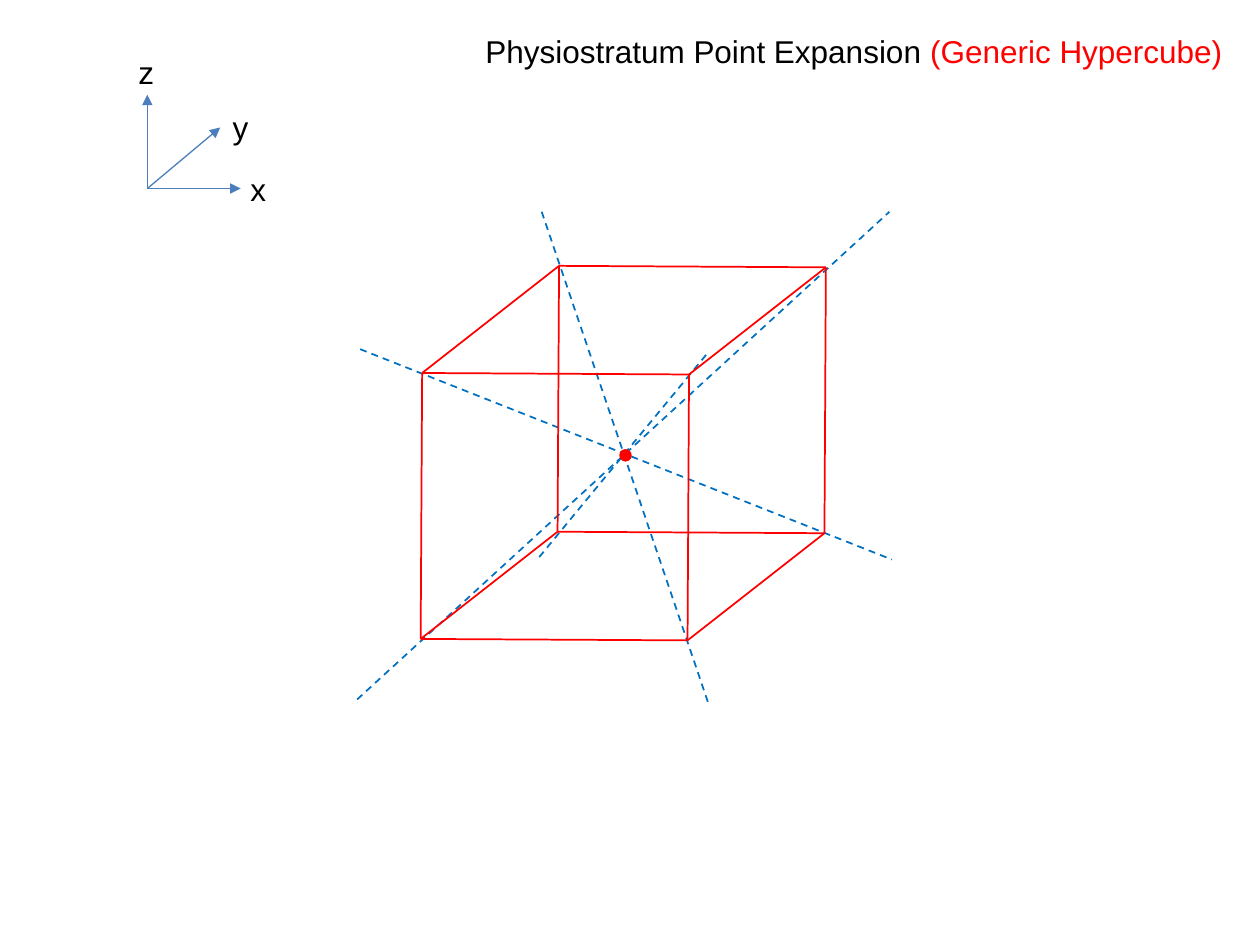
from itertools import combinations, product

from lxml.etree import SubElement
from pptx import Presentation
from pptx.dml.color import RGBColor
from pptx.enum.dml import MSO_LINE
from pptx.enum.shapes import MSO_CONNECTOR, MSO_SHAPE
from pptx.enum.text import MSO_ANCHOR, MSO_AUTO_SIZE, PP_ALIGN
from pptx.oxml.ns import qn
from pptx.util import Cm, Pt

COLOURS = {
    "text": "000000",
    "cube": "FF0000",
    "diagonal": "0070C0",
    "axis": "4B7EBC",
}


def colour(role):
    """Return the colour that belongs to a role."""
    return RGBColor.from_string(COLOURS[role])


def add_line(slide, origin, start, end, role, width=1, dashed=False, arrow=False):
    """Draw a straight line between two points measured in cm from origin."""
    left, top = origin
    line = slide.shapes.add_connector(
        MSO_CONNECTOR.STRAIGHT,
        Cm(left + start[0]), Cm(top + start[1]),
        Cm(left + end[0]), Cm(top + end[1]),
    )
    line.line.color.rgb = colour(role)
    line.line.width = Pt(width)
    if dashed:
        line.line.dash_style = MSO_LINE.DASH
    properties = line._element.spPr
    if arrow:
        SubElement(properties.find(qn("a:ln")), qn("a:tailEnd"), type="triangle")
    SubElement(properties, qn("a:effectLst"))


def format_text(paragraph):
    """Give a paragraph the font of the slide."""
    paragraph.font.name = "Arial"
    paragraph.font.size = Pt(18)
    paragraph.alignment = PP_ALIGN.LEFT


def add_heading(slide, left, top, width, height):
    """Fill and place the title with its coloured second part."""
    title = slide.shapes.title
    title.left, title.top, title.width, title.height = map(Cm, (left, top, width, height))
    frame = title.text_frame
    frame.word_wrap = True
    frame.auto_size = MSO_AUTO_SIZE.NONE
    frame.vertical_anchor = MSO_ANCHOR.TOP
    heading = frame.paragraphs[0]
    format_text(heading)
    parts = (("Physiostratum Point Expansion ", "text"), ("(Generic Hypercube)", "cube"))
    for words, role in parts:
        run = heading.add_run()
        run.text = words
        run.font.color.rgb = colour(role)


def add_axes(slide, left, top):
    """Draw the x, y and z arrows with their letters."""
    axes = (
        ("x", (2.31, 2.86), (2.26, 2.36)),
        ("y", (1.9, 1.63), (1.9, 1.12)),
        ("z", (0.43, 0.97), (0, 0)),
    )
    for letter, tip, corner in axes:
        add_line(slide, (left, top), (0.43, 2.86), tip, "axis", 0.75, arrow=True)
        label = slide.shapes.add_textbox(
            Cm(left + corner[0]), Cm(top + corner[1]), Cm(0.64), Cm(1.02)
        )
        label.text_frame.word_wrap = True
        paragraph = label.text_frame.paragraphs[0]
        paragraph.text = letter
        format_text(paragraph)
        paragraph.font.color.rgb = colour("text")


def add_cube(slide, left, top):
    """Draw the cube, its extended diagonals and its central point."""
    origin = (left, top)
    diagonals = (
        ((0, 9.83), (10.73, 0)),
        ((3.72, 0), (7.07, 9.88)),
        ((3.67, 6.96), (7.07, 2.84)),
        ((0.06, 2.77), (10.78, 7.01)),
    )
    for start, end in diagonals:
        add_line(slide, origin, start, end, "diagonal", dashed=True)

    corners = {
        (x, y, z): (
            1.28 + 5.38 * x + 2.76 * y + 0.03 * z,
            8.61 + 0.03 * x - 2.16 * y - 5.36 * z,
        )
        for x, y, z in product((0, 1), repeat=3)
    }
    for first, second in combinations(corners, 2):
        if sum(a != b for a, b in zip(first, second)) == 1:
            add_line(slide, origin, corners[first], corners[second], "cube")

    point = slide.shapes.add_shape(
        MSO_SHAPE.OVAL, Cm(left + 5.32), Cm(top + 4.82), Cm(0.18), Cm(0.18)
    )
    point.shadow.inherit = False
    point.fill.solid()
    point.fill.fore_color.rgb = colour("cube")
    point.line.color.rgb = colour("cube")
    point.line.width = Pt(2)


def main():
    """Build and save the slide."""
    presentation = Presentation()
    presentation.slide_width, presentation.slide_height = Cm(25.4), Cm(19.05)
    slide = presentation.slides.add_slide(presentation.slide_layouts[5])
    add_cube(slide, 7.2, 4.27)
    add_axes(slide, 2.54, 0.94)
    add_heading(slide, 9.53, 0.51, 15.67, 1.02)
    presentation.save("out.pptx")


if __name__ == "__main__":
    main()
